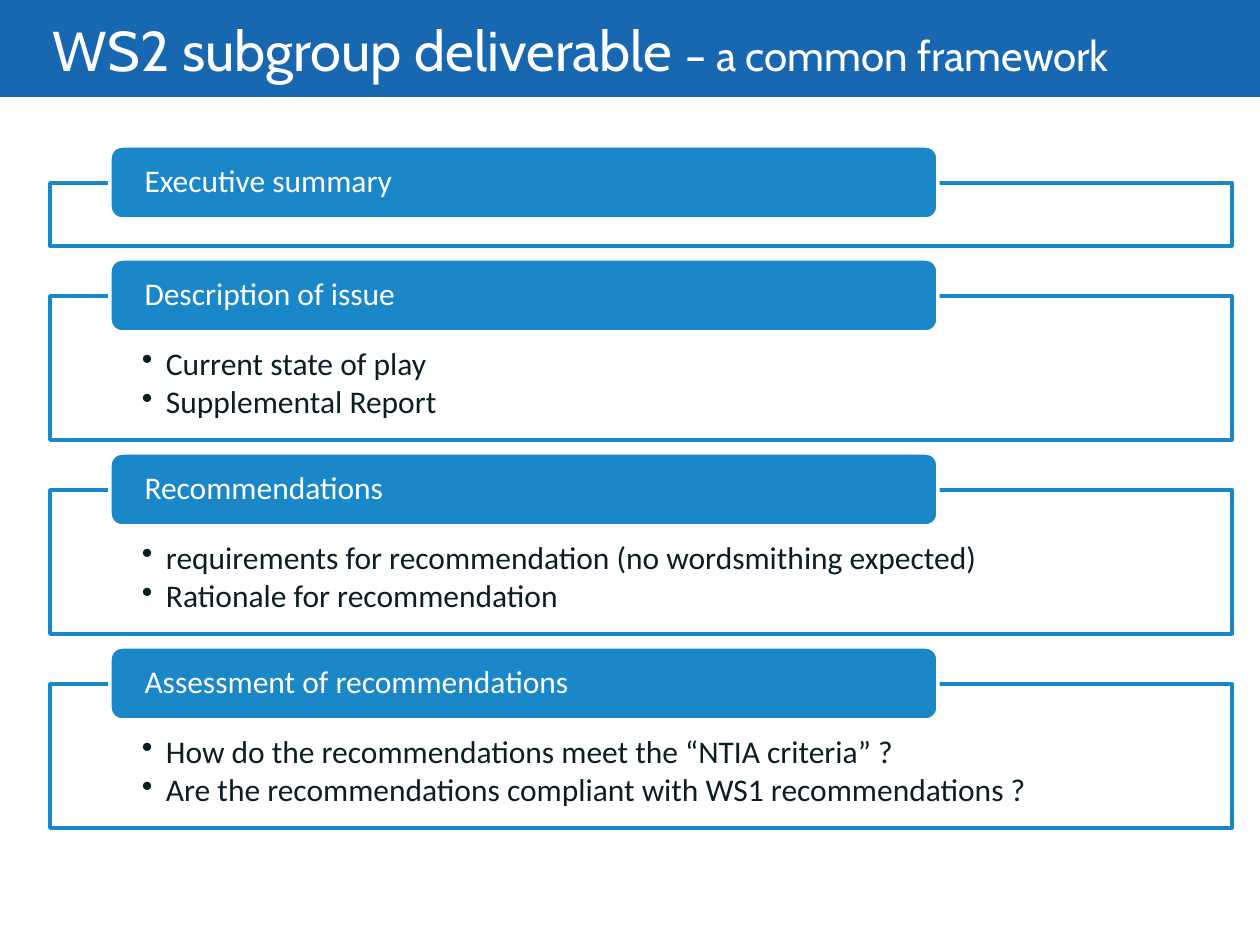
"""Build the slide showing the common framework of the WS2 deliverable."""
from lxml import etree
from pptx import Presentation
from pptx.dml.color import RGBColor
from pptx.enum.shapes import MSO_SHAPE
from pptx.enum.text import MSO_ANCHOR, MSO_AUTO_SIZE, PP_ALIGN
from pptx.oxml.ns import qn
from pptx.util import Emu, Pt

RECT, ROUNDED = MSO_SHAPE.RECTANGLE, MSO_SHAPE.ROUNDED_RECTANGLE
MIDDLE, TOP = MSO_ANCHOR.MIDDLE, MSO_ANCHOR.TOP
LEFT, NO_FIT = PP_ALIGN.LEFT, MSO_AUTO_SIZE.NONE

TITLE = [("WS2 subgroup deliverable ", 32), ("– a common framework", 24)]
SECTIONS = [
    ("Executive summary", []),
    ("Description of issue", ["Current state of play", "Supplemental Report"]),
    ("Recommendations", [
        "requirements for recommendation (no wordsmithing expected)",
        "Rationale for recommendation",
    ]),
    ("Assessment of recommendations", [
        "How do the recommendations meet the “NTIA criteria” ?",
        "Are the recommendations compliant with WS1 recommendations ?",
    ]),
]

BANNER, BLUE, WHITE, DARK = "1768B1", "1A87C9", "FFFFFF", "0A1F24"
FRAME_LEFT, FRAME_WIDTH, FIRST_TOP, FRAME_GAP = 50, 1182, 183, 50
EMPTY_HEIGHT, LISTED_HEIGHT = 63, 144
TAB_LEFT, TAB_WIDTH, TAB_HEIGHT, TAB_RISE = 110, 828, 73, 37
BULLET_INDENT, TITLE_INDENT = 24, 40


def px(length):
    return Emu(round(length * 914400 / 126))


def color(value):
    return RGBColor.from_string(value)


def add_run(paragraph, text, size, font, ink):
    run = paragraph.add_run()
    run.text = text
    run.font.size, run.font.name = Pt(size), font
    run.font.color.rgb = color(ink)


def add_panel(slide, kind, box, fill, line):
    panel = slide.shapes.add_shape(kind, *map(px, box))
    panel.shadow.inherit = False
    panel.fill.solid()
    panel.fill.fore_color.rgb = color(fill)
    panel.line.color.rgb = color(line)
    panel.line.width = Pt(2)
    return panel


def set_text_area(frame, insets, anchor):
    frame.word_wrap, frame.auto_size = True, NO_FIT
    frame.vertical_anchor = anchor
    (frame.margin_left, frame.margin_top,
     frame.margin_right, frame.margin_bottom) = map(px, insets)


def write_lines(frame, lines, ink, space_after, bulleted=False):
    for index, line in enumerate(lines):
        paragraph = frame.paragraphs[0] if index == 0 else frame.add_paragraph()
        paragraph.alignment = LEFT
        paragraph.line_spacing, paragraph.space_after = 0.9, Pt(space_after)
        if bulleted:
            paragraph.level = 1
            properties = paragraph._p.get_or_add_pPr()
            properties.set("marL", str(px(BULLET_INDENT)))
            properties.set("indent", str(-px(BULLET_INDENT)))
            etree.SubElement(properties, qn("a:buChar")).set("char", "•")
        add_run(paragraph, line, 18, "Calibri", ink)


def add_title(slide):
    title = slide.shapes.title
    title.left, title.top, title.width, title.height = map(px, (0, -1, 1260, 98))
    title.fill.solid()
    title.fill.fore_color.rgb = color(BANNER)
    set_text_area(title.text_frame, (13, 6, 13, 6), MIDDLE)
    paragraph = title.text_frame.paragraphs[0]
    paragraph.alignment, paragraph.line_spacing = LEFT, Pt(39.8)
    properties = paragraph._p.get_or_add_pPr()
    properties.set("marL", str(px(TITLE_INDENT)))
    properties.set("indent", "0")
    for text, size in TITLE:
        add_run(paragraph, text, size, "Cabin", WHITE)


def add_section(slide, top, height, heading, points):
    frame = add_panel(slide, RECT, (FRAME_LEFT, top, FRAME_WIDTH, height), WHITE, BLUE)
    tint = frame.fill._xPr.find(qn("a:solidFill"))[0]
    etree.SubElement(tint, qn("a:alpha")).set("val", "90000")
    set_text_area(frame.text_frame, (92, 52, 92, 18), TOP)
    write_lines(frame.text_frame, points, DARK, 2.7, bulleted=True)

    tab_box = (TAB_LEFT, top - TAB_RISE, TAB_WIDTH, TAB_HEIGHT)
    tab = add_panel(slide, ROUNDED, tab_box, BLUE, WHITE)
    set_text_area(tab.text_frame, (31, 0, 31, 0), MIDDLE)
    write_lines(tab.text_frame, [heading], WHITE, 6.3)


def main():
    deck = Presentation()
    deck.slide_width, deck.slide_height = px(1260), px(945)
    slide = deck.slides.add_slide(deck.slide_layouts[5])
    add_title(slide)
    top = FIRST_TOP
    for heading, points in SECTIONS:
        height = LISTED_HEIGHT if points else EMPTY_HEIGHT
        add_section(slide, top, height, heading, points)
        top += height + FRAME_GAP
    deck.save("out.pptx")


if __name__ == "__main__":
    main()
